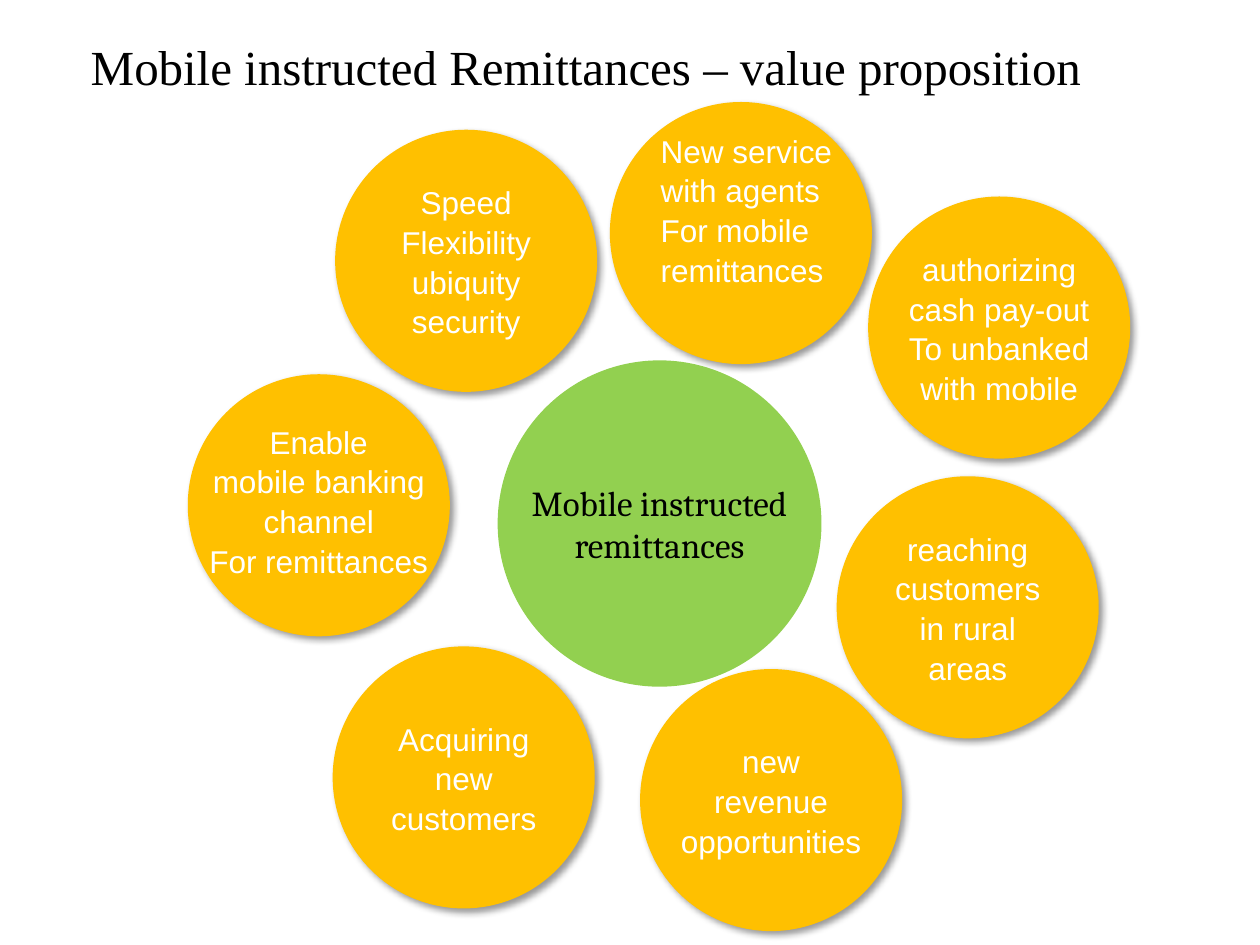
from dataclasses import dataclass

from lxml.etree import SubElement
from pptx import Presentation
from pptx.dml.color import RGBColor
from pptx.enum.shapes import MSO_SHAPE
from pptx.enum.text import MSO_ANCHOR, MSO_AUTO_SIZE, PP_ALIGN
from pptx.oxml.ns import qn
from pptx.slide import Slide
from pptx.util import Inches, Pt

WHITE = RGBColor(0xFF, 0xFF, 0xFF)
BLACK = RGBColor(0x00, 0x00, 0x00)
AMBER = RGBColor(0xFF, 0xC0, 0x00)
GREEN = RGBColor(0x92, 0xD0, 0x50)

COLUMNS, ROWS = 100, 75
BENEFIT_SIZE = 20.8

# Left column, top row and lines of each benefit
BENEFITS = [
    (66.4, 37.8, ["reaching", "customers", "in rural", "areas"]),
    (26.4, 51.3, ["Acquiring", "new", "customers"]),
    (26.6, 10.3, ["Speed", "Flexibility", "ubiquity", "security"]),
    (50.8, 53.1, ["new", "revenue", "opportunities"]),
    (68.9, 15.6, ["authorizing", "cash pay-out", "To unbanked", "with mobile"]),
]
AGENT_SERVICE = ["New service", "with agents", "For mobile", "remittances"]
BANKING_CHANNEL = ["Enable", "mobile banking", "channel", "For remittances"]


def write_text(frame, lines, font="Arial", size=18, color=WHITE,
               align=PP_ALIGN.CENTER, spacing=1.05):
    for index, line in enumerate(lines):
        paragraph = frame.paragraphs[0] if index == 0 else frame.add_paragraph()
        paragraph.alignment = align
        paragraph.line_spacing = spacing
        run = paragraph.add_run()
        run.text = line
        run.font.name = font
        run.font.size = Pt(size)
        run.font.color.rgb = color


def cast_shadow(shape):
    """Add a soft black shadow towards the lower right."""
    effects = shape._element.spPr.find(qn("a:effectLst"))
    shadow = SubElement(effects, qn("a:outerShdw"), blurRad=str(Pt(4)),
                        dist=str(Pt(3)), dir="2700000", algn="tl",
                        rotWithShape="0")
    color = SubElement(shadow, qn("a:srgbClr"), val="000000")
    SubElement(color, qn("a:alpha"), val="40000")


@dataclass
class Canvas:
    presentation: Presentation
    slide: Slide

    def place(self, column, row, columns, rows):
        """Turn grid cells into left, top, width and height."""
        cell_width = self.presentation.slide_width / COLUMNS
        cell_height = self.presentation.slide_height / ROWS
        return (round(column * cell_width), round(row * cell_height),
                round(columns * cell_width), round(rows * cell_height))

    def title(self, text, *cells):
        shape = self.slide.shapes.title
        shape.left, shape.top, shape.width, shape.height = self.place(*cells)
        frame = shape.text_frame
        frame.margin_left = frame.margin_right = 0
        frame.margin_top = frame.margin_bottom = 0
        frame.vertical_anchor = MSO_ANCHOR.TOP
        frame.auto_size = MSO_AUTO_SIZE.NONE
        frame.word_wrap = True
        write_text(frame, [text], font="Times New Roman", size=28,
                   color=BLACK, align=PP_ALIGN.LEFT, spacing=0.9)

    def circle(self, lines, *cells, fill=AMBER, bottom=0.05, **text_format):
        shape = self.slide.shapes.add_shape(MSO_SHAPE.OVAL, *self.place(*cells))
        shape.shadow.inherit = False
        shape.fill.solid()
        shape.fill.fore_color.rgb = fill
        shape.line.fill.background()
        frame = shape.text_frame
        frame.word_wrap = False
        frame.vertical_anchor = MSO_ANCHOR.MIDDLE
        frame.margin_bottom = Inches(bottom)
        write_text(frame, lines, **text_format)
        return shape

    def benefit(self, lines, column, row, **options):
        cast_shadow(self.circle(lines, column, row, BENEFIT_SIZE, BENEFIT_SIZE,
                                **options))


def main():
    presentation = Presentation()
    presentation.slide_width = Inches(10)
    presentation.slide_height = Inches(7.5)
    slide = presentation.slides.add_slide(presentation.slide_layouts[5])
    canvas = Canvas(presentation, slide)

    canvas.title("Mobile instructed Remittances – value proposition",
                 7.2, 3.4, 82.9, 8.4)
    # A deeper bottom margin lifts the text above the middle of its circle
    canvas.benefit(AGENT_SERVICE, 48.4, 8.1, bottom=0.43, align=PP_ALIGN.LEFT)
    canvas.benefit(BANKING_CHANNEL, 14.9, 29.7, bottom=0.13)
    for column, row, lines in BENEFITS:
        canvas.benefit(lines, column, row)
    canvas.circle(["Mobile instructed", "remittances"], 39.5, 28.6, 25.7, 25.9,
                  fill=GREEN, font="Cambria", size=20, color=BLACK, spacing=1)

    presentation.save("out.pptx")


if __name__ == "__main__":
    main()
